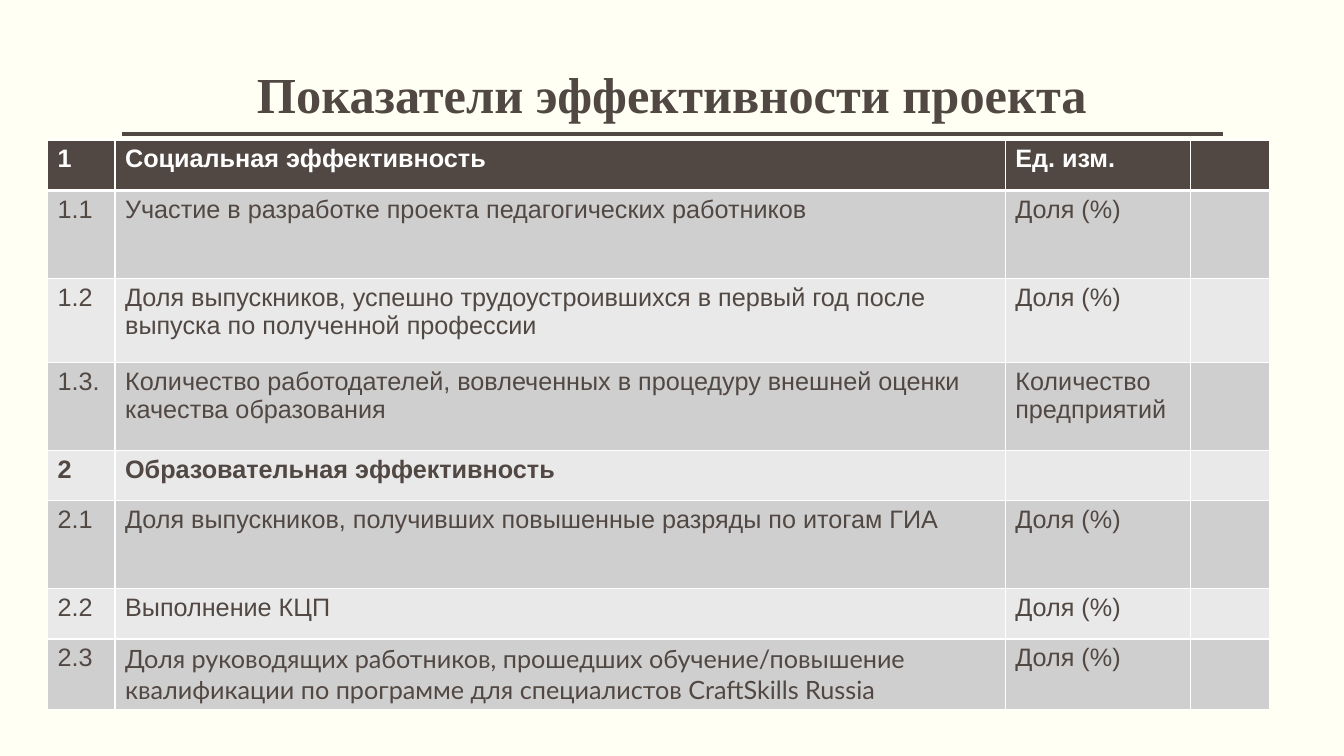
"""Build the slide with the table of project efficiency indicators."""
from lxml import etree
from pptx import Presentation, util as u
from pptx.dml.color import RGBColor
from pptx.enum import shapes, text
from pptx.oxml import ns

COLORS = {
    "paper": "FFFFF3",
    "ink": "514843",
    "white": "FFFFFF",
    "dark_band": "D0CFCF",
    "light_band": "E9E9E9",
}

SHARE = "Доля (%)"
INDICATORS = [
    ("1", "Социальная эффективность", "Ед. изм.", ""),
    ("1.1", "Участие в разработке проекта педагогических работников", SHARE, ""),
    ("1.2", "Доля выпускников, успешно трудоустроившихся в первый год после "
            "выпуска по полученной профессии", SHARE, ""),
    ("1.3.", "Количество работодателей, вовлеченных в процедуру внешней оценки "
             "качества образования", "Количество предприятий", ""),
    ("2", "Образовательная эффективность", "", ""),
    ("2.1", "Доля выпускников, получивших повышенные разряды по итогам ГИА", SHARE, ""),
    ("2.2", "Выполнение КЦП", SHARE, ""),
    ("2.3", "Доля руководящих работников, прошедших обучение/повышение "
            "квалификации по программе для специалистов CraftSkills Russia", SHARE, ""),
]
COLUMN_SHARES = [5.03, 66.24, 13.8, 5.85]
ROW_SHARES = [6.67, 11.6, 11.2, 11.6, 6.67, 11.6, 6.67, 9.33]
SECTIONS = ("1", "2")
LATO_CELL = (7, 1)


def rgb(name):
    return RGBColor.from_string(COLORS[name])


class Deck:
    """Hold the style and the current slide; lengths are percent of its size."""

    def __init__(self):
        self.prs = Presentation()
        self.prs.slide_width, self.prs.slide_height = u.Inches(13.33), u.Inches(7.5)
        self.slide = self.prs.slides.add_slide(self.prs.slide_layouts[5])
        self.slide.background.fill.solid()
        self.slide.background.fill.fore_color.rgb = rgb("paper")

    def x(self, share):
        return round(self.prs.slide_width * share / 100)

    def y(self, share):
        return round(self.prs.slide_height * share / 100)

    def style(self, paragraph, font, size, color, bold):
        for run in paragraph.runs:
            run.font.name, run.font.size, run.font.bold = font, u.Pt(size), bold
            run.font.color.rgb = rgb(color)

    def title(self, wording, left, top, width, height):
        heading = self.slide.shapes.title
        heading.left, heading.top = self.x(left), self.y(top)
        heading.width, heading.height = self.x(width), self.y(height)
        frame = heading.text_frame
        frame.text = wording
        frame.auto_size = text.MSO_AUTO_SIZE.NONE
        frame.word_wrap = True
        frame.vertical_anchor = text.MSO_ANCHOR.BOTTOM
        frame.margin_left = frame.margin_right = 0
        frame.margin_top = frame.margin_bottom = u.Inches(0.05)
        line = frame.paragraphs[0]
        line.alignment, line.line_spacing = text.PP_ALIGN.CENTER, 0.9
        self.style(line, "Times New Roman", 36, "ink", True)

    def rule(self, left, right, top, weight):
        underline = self.slide.shapes.add_connector(
            shapes.MSO_CONNECTOR.STRAIGHT,
            self.x(left), self.y(top), self.x(right), self.y(top))
        underline.line.color.rgb = rgb("ink")
        underline.line.width = u.Pt(weight)
        etree.SubElement(underline.element.spPr, ns.qn("a:effectLst"))

    def borders(self, cell, top, bottom):
        properties = cell._tc.get_or_add_tcPr()
        for side, weight in (("L", 1), ("R", 1), ("T", top), ("B", bottom)):
            edge = etree.SubElement(properties, ns.qn(f"a:ln{side}"), w=str(u.Pt(weight)))
            fill = etree.SubElement(edge, ns.qn("a:solidFill"))
            etree.SubElement(fill, ns.qn("a:srgbClr"), val=COLORS["white"])

    def table(self, rows, left, top, widths, heights):
        grid = self.slide.shapes.add_table(
            len(rows), len(widths), self.x(left), self.y(top),
            self.x(sum(widths)), self.y(sum(heights))).table
        grid.first_row = grid.horz_banding = False
        for column, width in zip(grid.columns, widths):
            column.width = self.x(width)
        for r, (row, height) in enumerate(zip(rows, heights)):
            grid.rows[r].height = self.y(height)
            band = "ink" if r == 0 else ("light_band", "dark_band")[r % 2]
            color = "white" if r == 0 else "ink"
            for c, wording in enumerate(row):
                cell = grid.cell(r, c)
                self.borders(cell, 3 if r == 1 else 1, 3 if r == 0 else 1)
                cell.fill.solid()
                cell.fill.fore_color.rgb = rgb(band)
                cell.text_frame.text = wording
                font = "Lato" if (r, c) == LATO_CELL else "Arial"
                self.style(cell.text_frame.paragraphs[0], font, 18, color,
                           row[0] in SECTIONS)


def main():
    deck = Deck()
    deck.rule(9.08, 90.98, 17.73, 3)
    deck.title("Показатели эффективности проекта", 9.08, 1.07, 81.85, 16)
    deck.table(INDICATORS, 3.53, 18.53, COLUMN_SHARES, ROW_SHARES)
    deck.prs.save("out.pptx")


if __name__ == "__main__":
    main()
